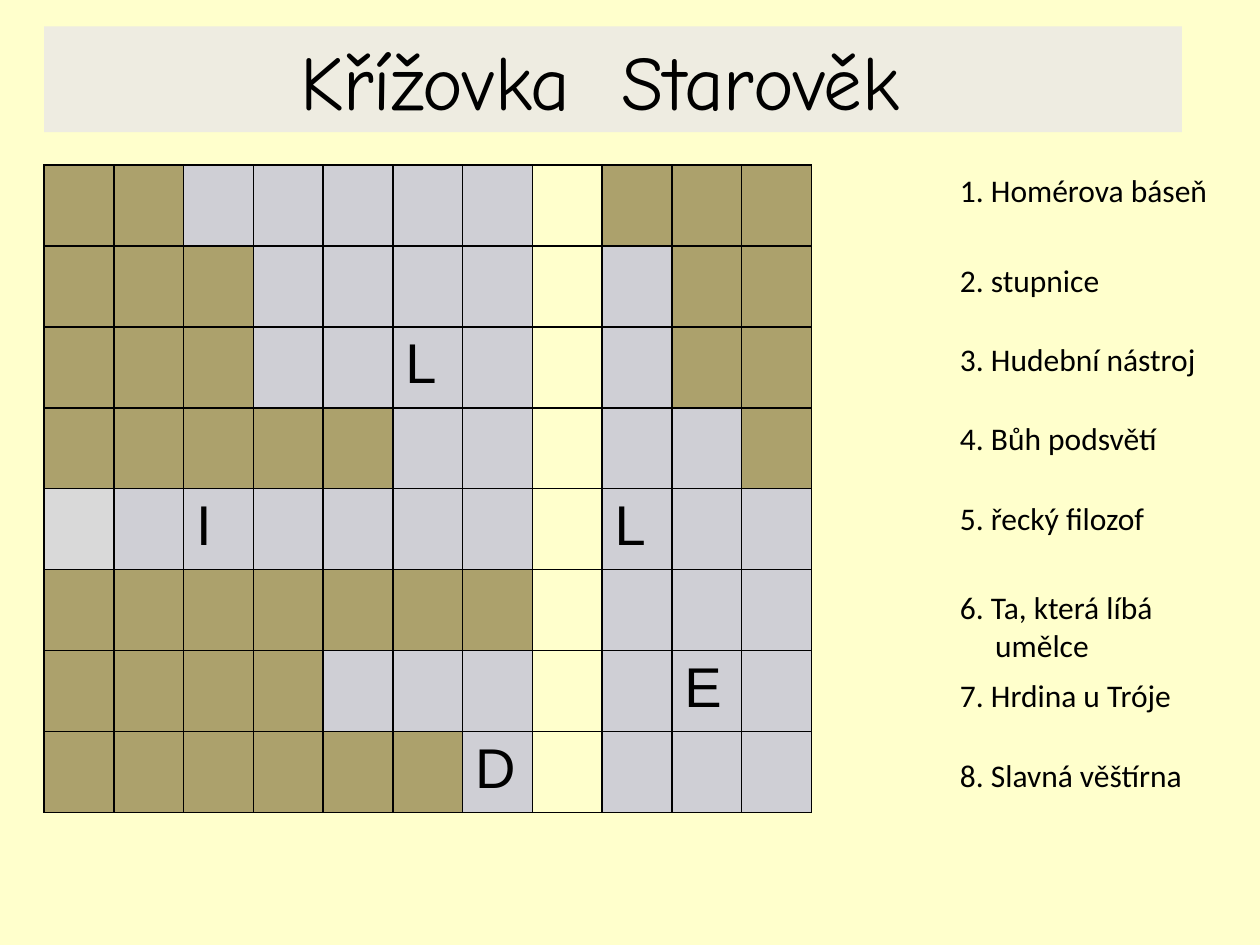
from pptx import Presentation, util as u
from pptx.dml.color import RGBColor
from pptx.enum import shapes, text
from pptx.oxml import parse_xml
from pptx.oxml.ns import nsdecls

WIDE, HIGH = 10, 7.5
LEFT, TOP = 0.35, 1.31          # corner of the crossword
COL, ROW = 6.09 / 11, 5.14 / 8  # one crossword square
CLUE_X = 7.52

PAPER, BAND, INK = "FFFFCC", "EEECE1", "000000"
# Square kinds: # blocked, . answer, * solution column, o pale answer
FILLS = {"#": "ACA16C", ".": "CFCFD5", "*": PAPER, "o": "D9D9D9"}
GRID = [
    "##.....*###",
    "###....*.##",
    "###..L.*.##",
    "#####..*..#",
    "o.I....*L..",
    "#######*...",
    "####...*.E.",
    "######D*...",
]
# Top, width and lines of each clue
CLUES = [
    (1.31, 2.19, ["1. Homérova báseň"]),
    (2.02, 2.28, ["2. stupnice"]),
    (2.65, 2.09, ["3. Hudební nástroj"]),
    (3.28, 1.78, ["4. Bůh podsvětí"]),
    (3.91, 2.17, ["5. řecký filozof"]),
    (4.62, 2.05, ["6. Ta, která líbá", "umělce"]),
    (5.32, 1.9, ["7. Hrdina u Tróje"]),
    (5.95, 2.06, ["8. Slavná věštírna"]),
]


def paint(fill, color):
    fill.solid()
    fill.fore_color.rgb = RGBColor.from_string(color)


def write(para, words, size=18, font="Calibri", align=None, indent=0):
    run = para.add_run()
    run.text = words
    run.font.size, run.font.name = u.Pt(size), font
    paint(run.font.fill, INK)
    para.alignment = align
    if indent:
        para._p.get_or_add_pPr().set("marL", str(u.Inches(indent)))


def edge(cell):
    """Draw a thin line on all four sides of a cell."""
    props = cell._tc.get_or_add_tcPr()
    for spot, side in enumerate(("lnL", "lnR", "lnT", "lnB")):
        line = parse_xml(
            f'<a:{side} {nsdecls("a")} w="{u.Pt(1)}"><a:solidFill>'
            f'<a:srgbClr val="{INK}"/></a:solidFill></a:{side}>')
        props.insert(spot, line)


def title(slide):
    box = slide.shapes.add_shape(
        shapes.MSO_SHAPE.RECTANGLE, u.Inches(LEFT), u.Inches(0.21),
        u.Inches(9.03), u.Inches(0.84))
    box.shadow.inherit = False
    paint(box.fill, BAND)
    box.line.fill.background()
    write(box.text_frame.paragraphs[0], "Křížovka  Starověk ", size=44,
          font="Comic Neue", align=text.PP_ALIGN.CENTER)


def puzzle(slide):
    rows, cols = len(GRID), len(GRID[0])
    table = slide.shapes.add_table(
        rows, cols, u.Inches(LEFT), u.Inches(TOP),
        u.Inches(COL * cols), u.Inches(ROW * rows)).table
    table.first_row = table.horz_banding = False
    for r, line in enumerate(GRID):
        for c, mark in enumerate(line):
            cell = table.cell(r, c)
            paint(cell.fill, FILLS.get(mark, FILLS["."]))
            edge(cell)
            if mark not in FILLS:
                write(cell.text_frame.paragraphs[0], mark, size=32, font="Arial")


def clue(slide, top, width, lines):
    box = slide.shapes.add_textbox(
        u.Inches(CLUE_X), u.Inches(top), u.Inches(width),
        u.Inches(0.1 + 0.3 * len(lines)))
    frame = box.text_frame
    frame.word_wrap = True
    write(frame.paragraphs[0], lines[0])
    for more in lines[1:]:
        write(frame.add_paragraph(), more, indent=0.28)


def main():
    deck = Presentation()
    deck.slide_width, deck.slide_height = u.Inches(WIDE), u.Inches(HIGH)
    slide = deck.slides.add_slide(deck.slide_layouts[6])
    paint(slide.background.fill, PAPER)
    title(slide)
    puzzle(slide)
    for item in CLUES:
        clue(slide, *item)
    deck.save("out.pptx")


if __name__ == "__main__":
    main()
